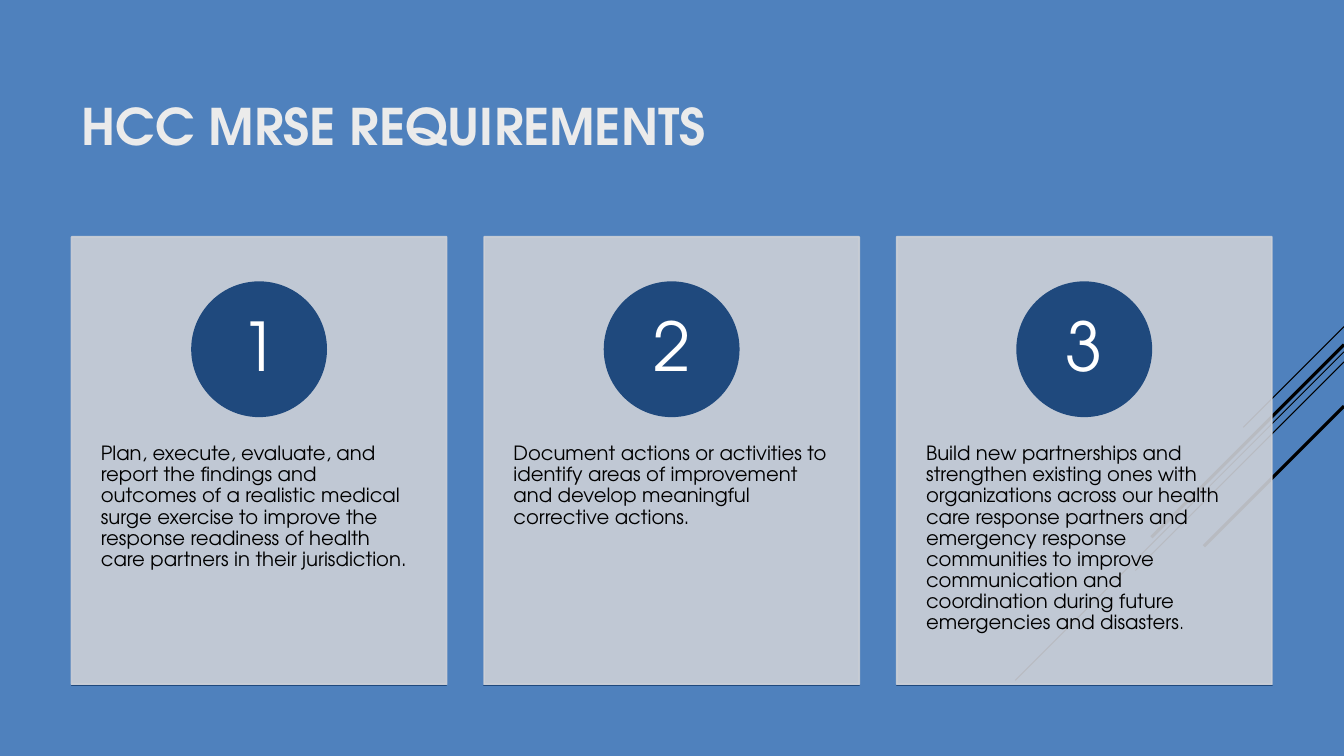
from dataclasses import dataclass

from lxml import etree
from pptx import Presentation
from pptx.dml.color import RGBColor
from pptx.enum.shapes import MSO_CONNECTOR, MSO_SHAPE
from pptx.enum.text import MSO_ANCHOR, MSO_AUTO_SIZE, PP_ALIGN
from pptx.oxml.ns import qn
from pptx.util import Inches, Pt

STRAIGHT = MSO_CONNECTOR.STRAIGHT
RECTANGLE, OVAL = MSO_SHAPE.RECTANGLE, MSO_SHAPE.OVAL
TOP, MIDDLE = MSO_ANCHOR.TOP, MSO_ANCHOR.MIDDLE
LEFT, CENTER = PP_ALIGN.LEFT, PP_ALIGN.CENTER
NO_FIT = MSO_AUTO_SIZE.NONE


@dataclass(frozen=True)
class Theme:
    font: str = "TeX Gyre Adventor"
    background: str = "4F81BD"
    title: str = "EBEBEB"
    card: str = "CDD0D7"
    accent: str = "1F497D"
    body: str = "000000"
    number: str = "FFFFFF"
    streak: str = "000000"
    title_size: float = 36
    number_size: float = 48
    body_size: float = 14
    stop_size: float = 12
    outline: float = 1.25
    card_opacity: int = 90


THEME = Theme()
PAGE_WIDTH, PAGE_HEIGHT = 13.33, 7.5
MARGIN = 0.71
CARD_TOP, CARD_WIDTH, CARD_HEIGHT = 2.35, 3.72, 4.44
COLUMN_STEP = CARD_WIDTH * 1.1
BADGE_TOP, BADGE_SIZE, NUMBER_SIZE = 2.8, 1.33, 0.94
BODY_TOP, BODY_HEIGHT = 4.04, 2.67
RULE_TOP = 6.8

STREAKS = [
    (3.24, 1.0, 0.75),
    (3.49, 3.26, 0.75),
    (3.59, 2.07, 0.75),
    (3.42, 1.91, 2.25),
    (4.03, 1.39, 2.25),
]

REQUIREMENTS = [
    ("Plan, execute, evaluate, and report the findings and outcomes of a realistic "
     "medical surge exercise to improve the response readiness of health care "
     "partners in their jurisdiction.", ""),
    ("Document actions or activities to identify areas of improvement and develop "
     "meaningful corrective actions.", ""),
    ("Build new partnerships and strengthen existing ones with organizations across "
     "our health care response partners and emergency response communities to improve "
     "communication and coordination during future emergencies and disasters", "."),
]


def color(value):
    return RGBColor.from_string(value)


def set_opacity(shape, percent):
    for fill_color in shape._element.spPr.iter(qn("a:srgbClr")):
        etree.SubElement(fill_color, qn("a:alpha"), val=str(percent * 1000))


def style_span(span, size, value, bold=False):
    span.font.name = THEME.font
    span.font.size = Pt(size)
    span.font.bold = bold
    span.font.color.rgb = color(value)


def add_panel(page, kind, left, top, width, height, value):
    shape = page.shapes.add_shape(
        kind, Inches(left), Inches(top), Inches(width), Inches(height))
    shape.shadow.inherit = False
    shape.fill.solid()
    shape.fill.fore_color.rgb = color(value)
    shape.line.color.rgb = color(value)
    shape.line.width = Pt(THEME.outline)
    return shape


def add_text(page, text, left, top, width, height, insets, size, value,
             align=LEFT, anchor=TOP):
    box = page.shapes.add_textbox(
        Inches(left), Inches(top), Inches(width), Inches(height))
    frame = box.text_frame
    frame.word_wrap = True
    frame.vertical_anchor = anchor
    frame.margin_left = frame.margin_right = Inches(insets[0])
    frame.margin_top = frame.margin_bottom = Inches(insets[1])
    frame.text = text
    para = frame.paragraphs[0]
    para.alignment = align
    para.line_spacing = 0.9
    style_span(para.runs[0], size, value)
    return para


def add_streak(page, top, reach, weight):
    streak = page.shapes.add_connector(
        STRAIGHT, Inches(PAGE_WIDTH), Inches(top),
        Inches(PAGE_WIDTH - reach), Inches(top + reach))
    streak.line.color.rgb = color(THEME.streak)
    streak.line.width = Pt(weight)
    etree.SubElement(streak._element.spPr, qn("a:effectLst"))


def add_title(page, text):
    title = page.shapes.title
    title.left, title.top = Inches(MARGIN), Inches(0.69)
    title.width, title.height = Inches(10.12), Inches(1.11)
    frame = title.text_frame
    frame.auto_size = NO_FIT
    frame.vertical_anchor = MIDDLE
    frame.text = text
    para = frame.paragraphs[0]
    para.alignment = LEFT
    style_span(para.runs[0], THEME.title_size, THEME.title, bold=True)


def add_card(page, column, text, stop):
    left = MARGIN + column * COLUMN_STEP
    card = add_panel(page, RECTANGLE, left, CARD_TOP, CARD_WIDTH, CARD_HEIGHT, THEME.card)
    set_opacity(card, THEME.card_opacity)

    para = add_text(page, text, left, BODY_TOP, CARD_WIDTH, BODY_HEIGHT,
                    (0.29, 0.36), THEME.body_size, THEME.body)
    if stop:
        span = para.add_run()
        span.text = stop
        style_span(span, THEME.stop_size, THEME.body)

    add_panel(page, OVAL, left + (CARD_WIDTH - BADGE_SIZE) / 2, BADGE_TOP,
              BADGE_SIZE, BADGE_SIZE, THEME.accent)
    add_text(page, str(column + 1), left + (CARD_WIDTH - NUMBER_SIZE) / 2,
             BADGE_TOP + (BADGE_SIZE - NUMBER_SIZE) / 2, NUMBER_SIZE, NUMBER_SIZE,
             (0.1, 0.01), THEME.number_size, THEME.number, CENTER, MIDDLE)
    add_panel(page, RECTANGLE, left, RULE_TOP, CARD_WIDTH, 0, THEME.accent)


def main():
    deck = Presentation()
    deck.slide_width, deck.slide_height = Inches(PAGE_WIDTH), Inches(PAGE_HEIGHT)
    page = deck.slides.add_slide(deck.slide_layouts.get_by_name("Title Only"))
    page.background.fill.solid()
    page.background.fill.fore_color.rgb = color(THEME.background)

    for top, reach, weight in STREAKS:
        add_streak(page, top, reach, weight)
    add_title(page, "HCC MRSE REQUIREMENTS")
    for column, (text, stop) in enumerate(REQUIREMENTS):
        add_card(page, column, text, stop)

    deck.save("out.pptx")


if __name__ == "__main__":
    main()
